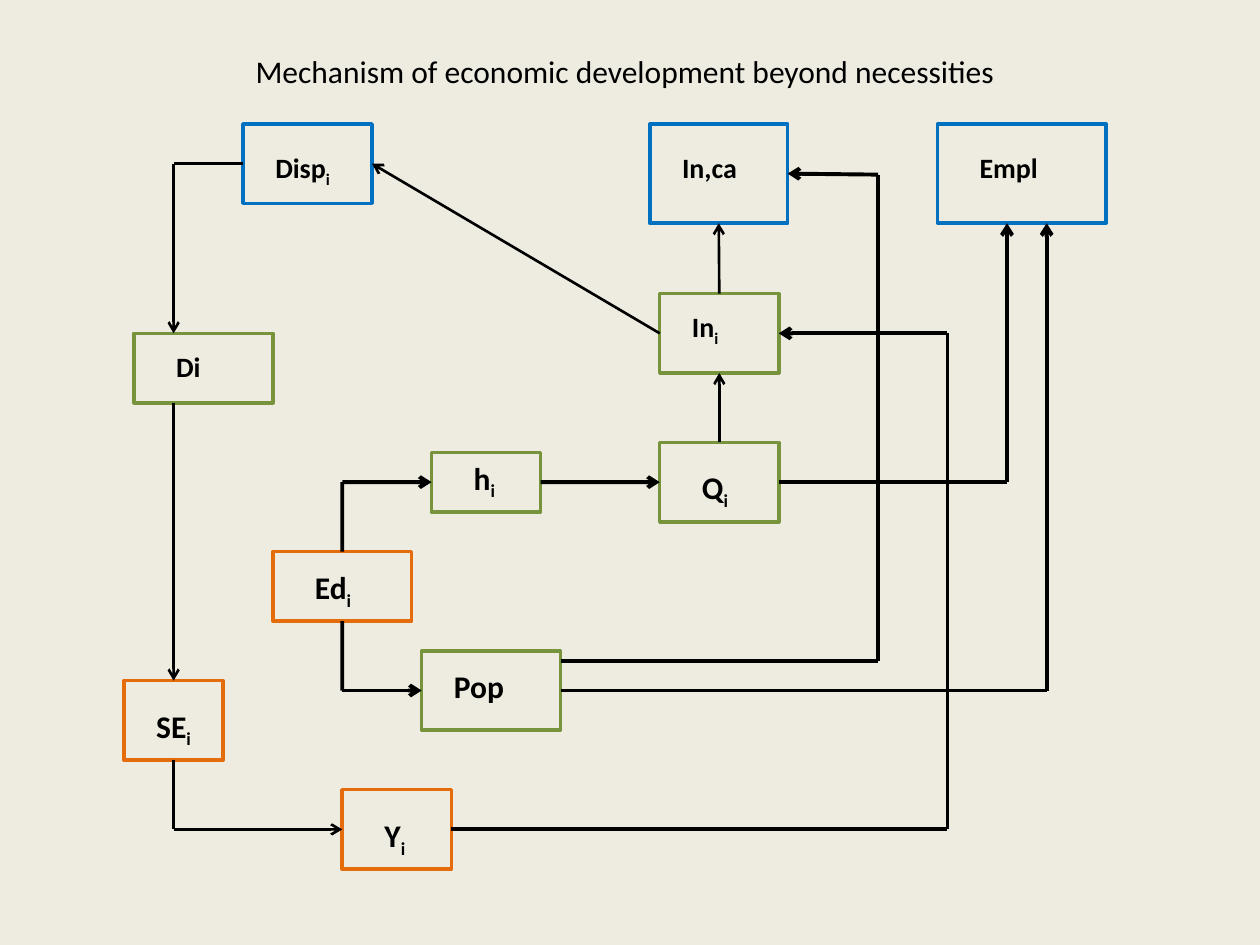
from pptx import Presentation
from pptx import util as u
from pptx.dml.color import RGBColor
from pptx.enum import shapes, text
from pptx.oxml import xmlchemy
from lxml import etree
from pptx.oxml.ns import qn

BACKGROUND = RGBColor(0xEE, 0xEC, 0xE1)
BLACK = RGBColor(0, 0, 0)
BLUE = RGBColor(0x00, 0x70, 0xC0)
ORANGE = RGBColor(0xE4, 0x6C, 0x0A)
GREEN = RGBColor(0x77, 0x93, 0x3C)
THIN, THICK = 1.5, 2.25
TOP, LEFT, BOTTOM, RIGHT = range(4)

presentation = Presentation()
presentation.slide_width = u.Cm(25.4)
presentation.slide_height = u.Cm(19.05)
slide = presentation.slides.add_slide(presentation.slide_layouts[6])
slide.background.fill.solid()
slide.background.fill.fore_color.rgb = BACKGROUND


def add_text(words, left, top, width, height, size=18, bold=True, wrap=False,
             subscript="", align=text.PP_ALIGN.LEFT):
    box = slide.shapes.add_textbox(u.Cm(left), u.Cm(top), u.Cm(width), u.Cm(height))
    frame = box.text_frame
    frame.word_wrap = wrap
    frame.auto_size = text.MSO_AUTO_SIZE.SHAPE_TO_FIT_TEXT
    paragraph = frame.paragraphs[0]
    paragraph.alignment = align
    for part, baseline in ((words, None), (subscript, "-25000")):
        if not part:
            continue
        run = paragraph.add_run()
        run.text = part
        run.font.name = "Calibri"
        run.font.size = u.Pt(size)
        run.font.bold = bold
        run.font.color.rgb = BLACK
        if baseline:
            run._r.get_or_add_rPr().set("baseline", baseline)


def add_line(start, end, width, arrow):
    """Each end is an (x, y) point in cm or a (box name, side) pair."""
    points = [(0, 0) if isinstance(point[0], str) else point for point in (start, end)]
    connector = slide.shapes.add_connector(
        shapes.MSO_CONNECTOR.STRAIGHT, *[u.Cm(value) for point in points for value in point])
    for point, connect in ((start, connector.begin_connect), (end, connector.end_connect)):
        if isinstance(point[0], str):
            connect(boxes[point[0]], point[1])
    connector.line.color.rgb = BLACK
    connector.line.width = u.Pt(width)
    if arrow:
        etree.SubElement(connector.line._get_or_add_ln(), qn("a:tailEnd"), type="arrow")
    etree.SubElement(connector._element.spPr, qn("a:effectLst"))


# Boxes: name, subscript, colour, left, top, width, height,
# then label offset, label width and label size
box_rows = [
    ("Disp", "i", BLUE, 4.9, 2.5, 2.6, 1.6, 0.4, 0.42, 2.0, 16),
    ("In,ca", "", BLUE, 13.1, 2.5, 2.78, 2.0, 0.4, 0.42, 2.0, 16),
    ("Empl", "", BLUE, 18.9, 2.5, 3.4, 2.0, 0.6, 0.42, 2.4, 16),
    ("Di", "", GREEN, 2.7, 6.72, 2.8, 1.4, 0.6, 0.2, 2.0, 16),
    ("In", "i", GREEN, 13.3, 5.92, 2.4, 1.6, 0.4, 0.2, 1.8, 16),
    ("SE", "i", ORANGE, 2.5, 13.72, 2.0, 1.6, 0.4, 0.4, 1.25, 18),
    ("Ed", "i", ORANGE, 5.5, 11.12, 2.8, 1.4, 0.6, 0.2, 1.27, 18),
    ("Y", "i", ORANGE, 6.9, 15.92, 2.2, 1.6, 0.6, 0.4, 0.94, 18),
    ("Pop", "", GREEN, 8.5, 13.12, 2.8, 1.6, 0.4, 0.2, 1.52, 18),
    ("h", "i", GREEN, 8.7, 9.12, 2.2, 1.2, 0.6, 0, 0.97, 18),
    ("Q", "i", GREEN, 13.3, 8.92, 2.4, 1.6, 0.6, 0.4, 1.07, 18),
]
boxes = {}
for name, _, color, left, top, width, height, *_ in box_rows:
    shape = slide.shapes.add_shape(
        shapes.MSO_SHAPE.FLOWCHART_PROCESS,
        u.Cm(left), u.Cm(top), u.Cm(width), u.Cm(height))
    shape.shadow.inherit = False
    shape.fill.background()
    shape.line.color.rgb = color
    shape.line.width = u.Pt(2)
    boxes[name] = shape

# Routes between boxes, each ending in an arrowhead
routes = [
    (THIN, ("Disp", LEFT), (3.5, 3.3), (3.5, 6.72)),
    (THIN, (3.5, 8.12), ("SE", TOP)),
    (THIN, ("In", LEFT), ("Disp", RIGHT)),
    (THIN, ("In", TOP), ("In,ca", BOTTOM)),
    (THIN, ("Q", TOP), ("In", BOTTOM)),
    (THICK, ("Ed", TOP), (6.9, 9.72), ("h", LEFT)),
    (THICK, ("Ed", BOTTOM), (6.9, 13.92), ("Pop", LEFT)),
    (THIN, ("SE", BOTTOM), (3.5, 16.72), ("Y", LEFT)),
    (THICK, ("Y", RIGHT), (19.1, 16.72), (19.1, 6.72), ("In", RIGHT)),
    (THICK, ("h", RIGHT), ("Q", LEFT)),
    (THICK, ("Q", RIGHT), (20.3, 9.72), (20.3, 4.5)),
    (THICK, ("Pop", RIGHT), (21.1, 13.92), (21.1, 4.5)),
    (THICK, (11.3, 13.32), (17.7, 13.32), (17.7, 3.52), ("In,ca", RIGHT)),
]
for width, *stops in routes:
    for start, end in zip(stops, stops[1:]):
        add_line(start, end, width, arrow=end is stops[-1])

# Labels and title
for name, subscript, _, left, top, _, _, dx, dy, width, size in box_rows:
    add_text(name, left + dx, top + dy, width, 0.94 if size == 16 else 1.02,
             size=size, subscript=subscript, wrap=size == 16)
add_text("Mechanism of economic development beyond necessities", 1.5, 0.92, 22.2, 1.02,
         bold=False, wrap=True, align=text.PP_ALIGN.CENTER)

presentation.save("out.pptx")
